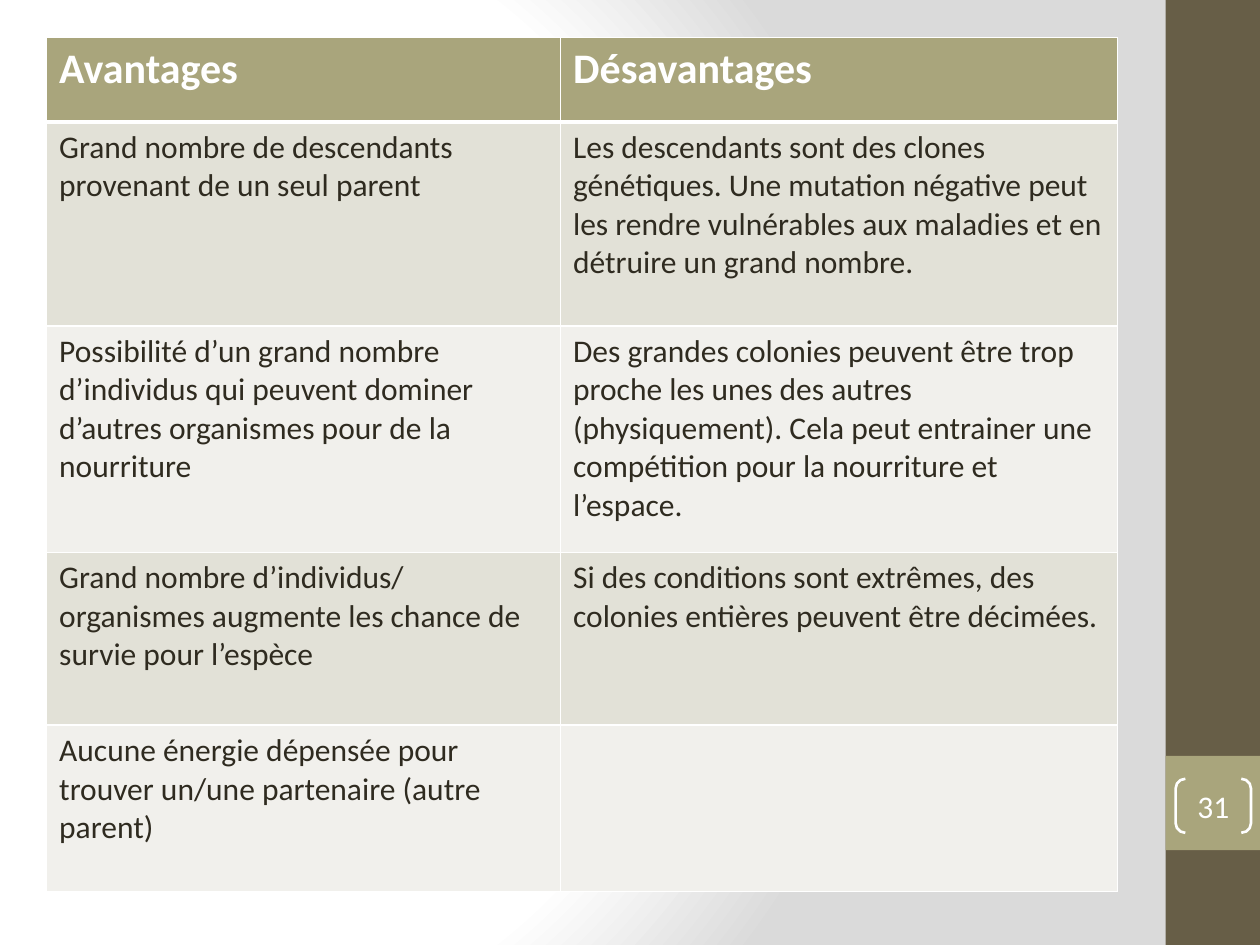
import pptx
import pptx.util
import pptx.dml.color
import pptx.enum.shapes
import pptx.enum.text
import pptx.oxml
from lxml import etree

Cm, Pt = pptx.util.Cm, pptx.util.Pt
SHAPES = pptx.enum.shapes.MSO_SHAPE
NS = 'xmlns:a="http://schemas.openxmlformats.org/drawingml/2006/main"'


def paint(color_format, color):
    color_format.rgb = pptx.dml.color.RGBColor.from_string(color)


def add_run(p, text, size, color, bold=False):
    r = p.add_run()
    r.text = text
    r.font.name = "Calibri"
    r.font.size = Pt(size)
    r.font.bold = bold
    paint(r.font.color, color)


prs = pptx.Presentation()
prs.slide_width, prs.slide_height = Cm(25.4), Cm(19.05)
s = prs.slides.add_slide(prs.slide_layouts[6])

s.background.fill.solid()
solid = s.background._cSld.bg.bgPr[0]
stops = "".join(
    f'<a:gs pos="{pos * 1000}"><a:srgbClr val="{color}"/></a:gs>'
    for pos, color in [(0, "FFFFFF"), (75, "FFFFFF"), (100, "DADADA")]
)
gradient = pptx.oxml.parse_xml(
    f'<a:gradFill {NS} rotWithShape="1"><a:gsLst>{stops}</a:gsLst>'
    '<a:path path="circle">'
    '<a:fillToRect l="20000" t="50000" r="100000" b="50000"/>'
    "</a:path></a:gradFill>"
)
solid.getparent().replace(solid, gradient)

for top, height, color in [(0, 19.05, "675E47"), (15.24, 1.9, "A9A57C")]:
    sp = s.shapes.add_shape(SHAPES.RECTANGLE, Cm(23.5), Cm(top), Cm(1.9), Cm(height))
    sp.shadow.inherit = False
    sp.fill.solid()
    paint(sp.fill.fore_color, color)
    sp.line.fill.background()

rows = [
    ("Avantages", "Désavantages"),
    (
        "Grand nombre de descendants provenant de un seul parent",
        "Les descendants sont des clones génétiques. Une mutation négative peut "
        "les rendre vulnérables aux maladies et en détruire un grand nombre.",
    ),
    (
        "Possibilité d’un grand nombre d’individus qui peuvent dominer "
        "d’autres organismes pour de la nourriture",
        "Des grandes colonies peuvent être trop proche les unes des autres "
        "(physiquement). Cela peut entrainer une compétition pour la nourriture "
        "et l’espace.",
    ),
    (
        "Grand nombre d’individus/ organismes augmente les chance de survie "
        "pour l’espèce",
        "Si des conditions sont extrêmes, des colonies entières peuvent être décimées.",
    ),
    ("Aucune énergie dépensée pour trouver un/une partenaire (autre parent)", ""),
]
widths = [10.36, 11.23]
heights = [1.7, 4.11, 4.57, 3.48, 3.35]

table = s.shapes.add_table(
    len(rows), 2, Cm(0.94), Cm(0.76), Cm(sum(widths)), Cm(sum(heights))
).table
for column, width in zip(table.columns, widths):
    column.width = Cm(width)
for i, (texts, height) in enumerate(zip(rows, heights)):
    table.rows[i].height = Cm(height)
    header = i == 0
    fill = "A9A57C" if header else ("F1F0EC", "E2E1D7")[i % 2]
    for j, text in enumerate(texts):
        cell = table.cell(i, j)
        cell.fill.solid()
        paint(cell.fill.fore_color, fill)
        for k, side in enumerate("LRTB"):
            thick = (header and side == "B") or (i == 1 and side == "T")
            border = etree.fromstring(
                f'<a:ln{side} {NS} w="{Pt(3 if thick else 1)}"><a:solidFill>'
                f'<a:srgbClr val="FFFFFF"/></a:solidFill></a:ln{side}>'
            )
            cell._tc.tcPr.insert(k, border)
        p = cell.text_frame.paragraphs[0]
        if header:
            add_run(p, text, 24, "FFFFFF", True)
        elif text:
            add_run(p, text, 18, "2F2B20")

sp = s.shapes.add_shape(SHAPES.DOUBLE_BRACKET, Cm(23.7), Cm(15.7), Cm(1.52), Cm(1.09))
sp.shadow.inherit = False
sp.adjustments[0] = 0.18
sp.fill.background()
paint(sp.line.color, "FFFFFF")
sp.line.width = Pt(1.5)
tf = sp.text_frame
tf.margin_left = tf.margin_right = tf.margin_top = tf.margin_bottom = 0
tf.vertical_anchor = pptx.enum.text.MSO_ANCHOR.MIDDLE
p = tf.paragraphs[0]
p.alignment = pptx.enum.text.PP_ALIGN.CENTER
add_run(p, "31", 18, "FFFFFF")

prs.save("out.pptx")
